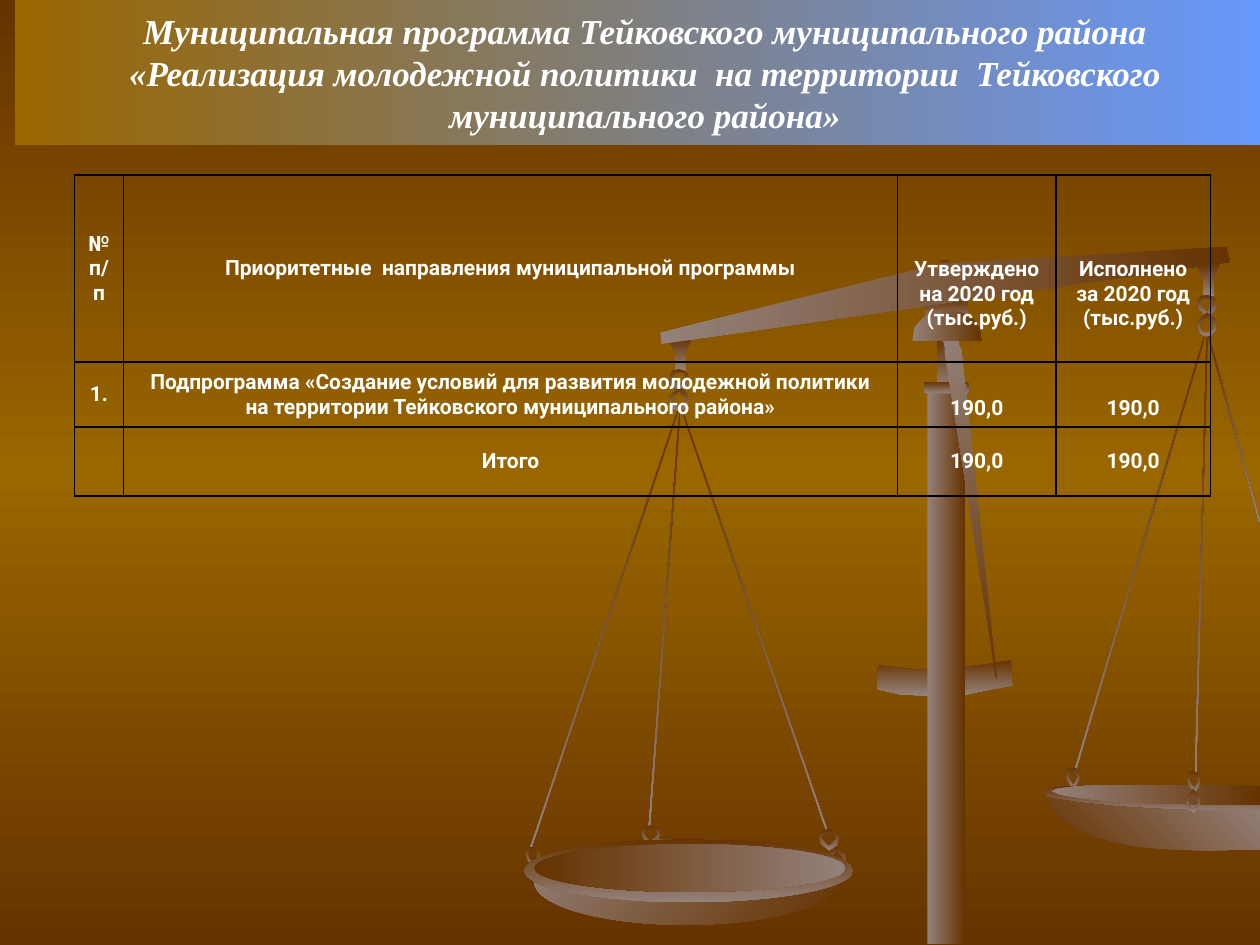
from dataclasses import dataclass

from lxml.etree import SubElement
from pptx import Presentation
from pptx.dml.color import RGBColor
from pptx.enum.shapes import MSO_SHAPE
from pptx.enum.text import MSO_ANCHOR, MSO_AUTO_SIZE, PP_ALIGN
from pptx.oxml.ns import qn
from pptx.util import Pt


@dataclass(frozen=True)
class Theme:
    dark: str = "663300"
    middle: str = "996600"
    blue: str = "6699FF"
    border: str = "000000"
    text: str = "FFFFFF"
    tint: int = 81000  # lightens the dark brown of the scales
    title_font: str = "Times New Roman"
    table_font: str = "Roboto"
    title_size: float = 20
    table_size: float = 12


THEME = Theme()
GRID = 0.72  # points per step of the scales drawing

# Gradients of the scales: stops as (position, colour, tint), then angle
DARK, LIGHT = (THEME.dark, None), (THEME.dark, THEME.tint)
DOWN = ((DARK, LIGHT), 90)
ACROSS = ((LIGHT, DARK), 0)
ACROSS_BACK = ((DARK, LIGHT), 0)
RISING = ((DARK, LIGHT), 315)
FALLING = ((LIGHT, DARK), 45)

# Chain link with its tip at the bottom, in percent of its box
LINK = (
    [(50, 100), (85, 75), (100, 45), (95, 25), (70, 5), (48, 0), (20, 8), (0, 40), (15, 70)],
    [(50, 15), (75, 20), (85, 45), (75, 60), (50, 82), (25, 60), (15, 38), (30, 15)],
)
# Hook under a beam end, in steps from its top left corner
HOOK = [(18, 0), (0, 2), (5, 12), (5, 26), (13, 26), (13, 12)]

CROSSBAR = [(697, 528), (724, 531), (739, 531), (757, 530), (778, 528), (802, 524), (804, 544),
            (782, 548), (768, 551), (751, 552), (733, 552), (714, 551), (696, 547)]
PAN_RIM = [(958, 624), (897, 624), (875, 623), (846, 624), (831, 626), (827, 628), (832, 633),
           (852, 638), (878, 641), (914, 644), (958, 645), (1000, 645), (1000, 626)]
PAN_BOWL = [(831, 633), (835, 642), (842, 649), (852, 657), (865, 663), (882, 668), (903, 672),
            (928, 674), (957, 675), (1000, 674), (1000, 643), (953, 643), (918, 642), (886, 640),
            (857, 637)]
PAN_INSIDE = [(956, 623), (886, 623), (856, 624), (839, 626), (834, 628), (843, 631), (863, 634),
              (893, 637), (933, 638), (978, 639), (1000, 639), (1000, 624)]
BEAM = [(973, 196), (976, 208), (525, 273), (524, 264), (737, 212), (759, 209)]
POINTER = [(791, 539), (750, 280), (750, 276), (748, 268), (760, 265), (761, 274), (763, 277)]
CAP = [(752, 247), (763, 248), (772, 253), (777, 260), (779, 271), (724, 271), (726, 260),
       (732, 253), (740, 248)]


def paint_gradient(fill, owner, stops, angle):
    """Spread (colour, tint) stops evenly over a fill."""
    fill.gradient()
    gradient = owner.find(".//" + qn("a:gradFill"))
    for child in list(gradient):
        gradient.remove(child)
    stop_list = SubElement(gradient, qn("a:gsLst"))
    for index, (color, tint) in enumerate(stops):
        position = 100000 * index // (len(stops) - 1)
        stop = SubElement(stop_list, qn("a:gs"), pos=str(position))
        shade = SubElement(stop, qn("a:srgbClr"), val=color)
        if tint:
            SubElement(shade, qn("a:tint"), val=str(tint))
    SubElement(gradient, qn("a:lin"), ang=str(angle * 60000), scaled="0")


def format_para(para, text, font_format):
    para.alignment = PP_ALIGN.CENTER
    span = para.add_run()
    span.text = text
    for name, value in font_format.items():
        setattr(span.font, name, value)
    span.font.color.rgb = RGBColor.from_string(THEME.text)


def draw_scales(page, left, top):
    """Balance scales, in grid steps from the given corner."""

    def finish(shape, gradient):
        shape.shadow.inherit = False
        shape.line.fill.background()
        paint_gradient(shape.fill, shape.element, *gradient)

    def preset(kind, x, y, width, height, gradient=DOWN, rotation=0):
        shape = page.shapes.add_shape(kind, Pt(left + x * GRID), Pt(top + y * GRID),
                                      Pt(width * GRID), Pt(height * GRID))
        shape.rotation = rotation
        finish(shape, gradient)

    def outline(gradient, *contours):
        builder = page.shapes.build_freeform(*contours[0][0], scale=Pt(GRID))
        builder.add_line_segments(contours[0][1:])
        for contour in contours[1:]:
            builder.move_to(*contour[0])
            builder.add_line_segments(contour[1:])
        finish(builder.convert_to_shape(Pt(left), Pt(top)), gradient)

    def link(x, y, width, height, tip_up=False):
        outline(DOWN, *[[(x + width * u / 100, y + height * (100 - v if tip_up else v) / 100)
                         for u, v in contour] for contour in LINK])

    def hook(x, y):
        outline(DOWN, [(x + dx, y + dy) for dx, dy in HOOK])

    # Pivot and strings
    preset(MSO_SHAPE.RECTANGLE, 734, 237, 34, 18)
    preset(MSO_SHAPE.OVAL, 746, 206, 8, 8)
    for x, y, length, rotation in [(904, 260, 360, 16.6), (953, 266, 347, 1.5),
                                   (979, 264, 153, 344.6), (598, 315, 353, 341),
                                   (479, 316, 368, 18.6), (527, 325, 331, 4.2)]:
        preset(MSO_SHAPE.RECTANGLE, x, y, 1, length, rotation=rotation)
    link(846, 609, 11, 17)
    # Crossbar and right pan
    outline(DOWN, CROSSBAR)
    outline(DOWN, PAN_RIM)
    outline(RISING, PAN_BOWL)
    outline(ACROSS, PAN_INSIDE)
    # Hooks, each with two links, and the beam
    for x, y in [(531, 268), (950, 209)]:
        hook(x, y)
        link(x, y + 25, 16, 17)
        link(x, y + 39, 16, 19, tip_up=True)
    link(942, 612, 11, 17)
    outline(ACROSS, BEAM)
    # Left pan
    link(509, 655, 15, 16)
    link(656, 672, 16, 19, tip_up=True)
    link(417, 672, 12, 16)
    preset(MSO_SHAPE.OVAL, 424, 666, 240, 68, FALLING)
    preset(MSO_SHAPE.OVAL, 416, 666, 261, 50)
    preset(MSO_SHAPE.OVAL, 424, 670, 247, 38, ACROSS_BACK)
    link(650, 658, 16, 17)
    link(941, 626, 12, 19, tip_up=True)
    # Column and pointer
    preset(MSO_SHAPE.RECTANGLE, 736, 308, 30, 441, ACROSS)
    preset(MSO_SHAPE.RECTANGLE, 744, 268, 13, 42)
    preset(MSO_SHAPE.ROUNDED_RECTANGLE, 733, 303, 36, 9)
    outline(FALLING, POINTER)
    outline(ACROSS, CAP)


def place_title(page, left, top, width, height):
    box = page.shapes.title
    box.left, box.top, box.width, box.height = Pt(left), Pt(top), Pt(width), Pt(height)
    paint_gradient(box.fill, box.element, ((THEME.middle, None), (THEME.blue, None)), 0)
    frame = box.text_frame
    for name, value in {"word_wrap": True, "auto_size": MSO_AUTO_SIZE.NONE,
                        "vertical_anchor": MSO_ANCHOR.MIDDLE}.items():
        setattr(frame, name, value)
    font_format = {"name": THEME.title_font, "size": Pt(THEME.title_size),
                   "bold": True, "italic": True}
    lines = ["Муниципальная программа Тейковского муниципального района",
             "«Реализация молодежной политики  на территории  Тейковского муниципального района»"]
    for index, line in enumerate(lines):
        para = frame.add_paragraph() if index else frame.paragraphs[0]
        para.line_spacing = Pt(24)
        format_para(para, line, font_format)


def fill_cell(cell, text, anchor, margins):
    cell.fill.background()
    cell.vertical_anchor = anchor
    for name, value in zip(("left", "top", "right", "bottom"), margins):
        setattr(cell, "margin_" + name, Pt(value))
    font_format = {"name": THEME.table_font, "size": Pt(THEME.table_size), "bold": True}
    for index, line in enumerate(text.split("\n") if text else []):
        para = cell.text_frame.add_paragraph() if index else cell.text_frame.paragraphs[0]
        format_para(para, line, font_format)
    # Borders come before the fill in the cell properties
    properties = cell._tc.get_or_add_tcPr()
    for index, side in enumerate(("a:lnL", "a:lnR", "a:lnT", "a:lnB")):
        line = SubElement(properties, qn(side), w=str(Pt(1)))
        SubElement(SubElement(line, qn("a:solidFill")), qn("a:srgbClr"), val=THEME.border)
        properties.insert(index, line)


def place_table(page, left, top):
    widths, heights = (28.2, 442.2, 90.6, 88.2), (107, 37, 39.5)
    rows = [
        ["№\nп/п", "Приоритетные  направления муниципальной программы",
         "Утверждено\nна 2020 год\n(тыс.руб.)", "Исполнено\nза 2020 год\n(тыс.руб.)"],
        ["1.", "Подпрограмма «Создание условий для развития молодежной политики "
               "на территории Тейковского муниципального района»", "190,0", "190,0"],
        ["", "Итого", "190,0", "190,0"],
    ]
    table = page.shapes.add_table(len(rows), len(widths), Pt(left), Pt(top),
                                  Pt(sum(widths)), Pt(sum(heights))).table
    table.first_row = table.horz_banding = False
    for column, width in zip(table.columns, widths):
        column.width = Pt(width)
    # Figures sit low in the first two rows, higher in the header
    figure_margins = [(7.2, 3.6, 7.2, 18), (7.2, 3.6, 7.2, 3.6), (5.8, 0, 5.8, 0)]
    label_margins = [(7.2, 3.6, 7.2, 3.6)] * 2 + [(5.8, 0, 5.8, 0)]
    for r, texts in enumerate(rows):
        table.rows[r].height = Pt(heights[r])
        for c, text in enumerate(texts):
            low = c > 1 and r < 2
            fill_cell(table.cell(r, c), text, MSO_ANCHOR.BOTTOM if low else MSO_ANCHOR.MIDDLE,
                      figure_margins[r] if low else label_margins[r])


def main():
    deck = Presentation()
    deck.slide_width, deck.slide_height = Pt(720), Pt(540)
    page = deck.slides.add_slide(deck.slide_layouts[5])
    paint_gradient(page.background.fill, page.element,
                   (DARK, (THEME.middle, None), DARK), 90)
    draw_scales(page, 0, 0)
    place_title(page, 8.64, 0, 720, 82.8)
    place_table(page, 42.5, 100)
    deck.save("out.pptx")


if __name__ == "__main__":
    main()
